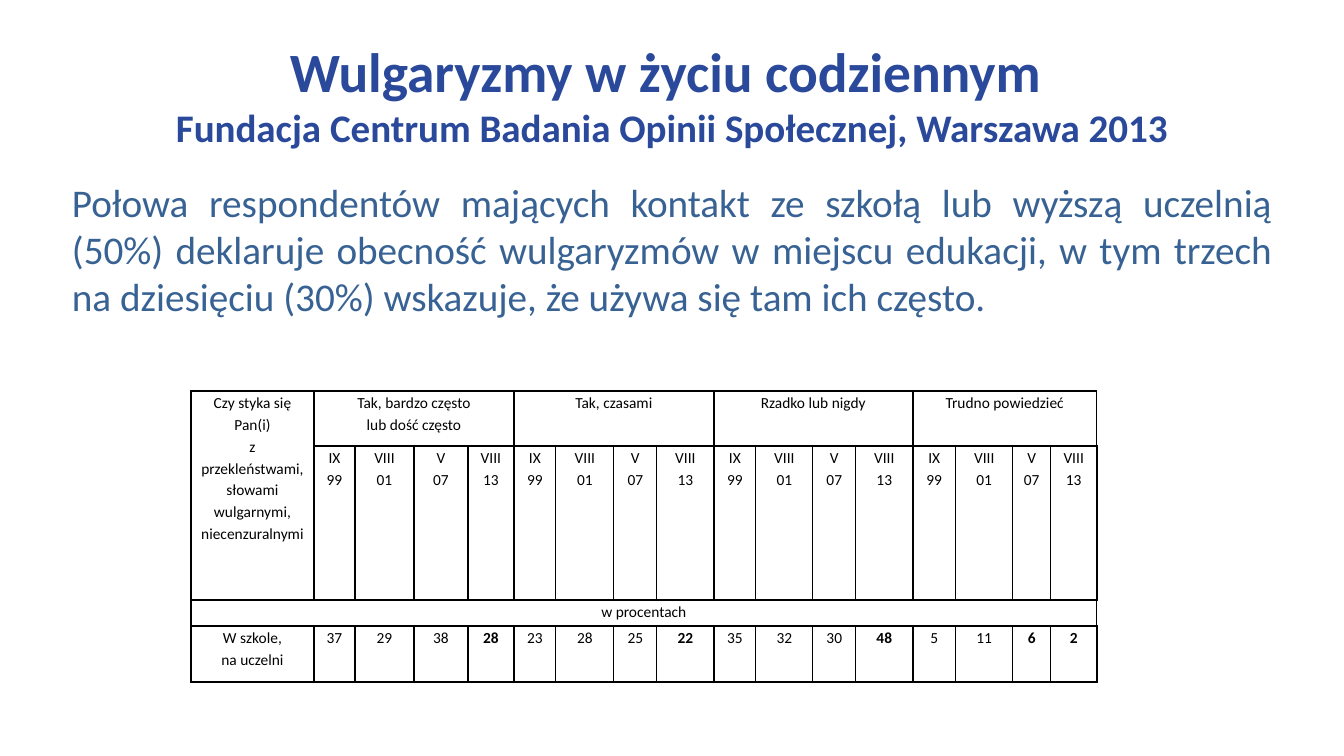
import pptx
import pptx.dml.color
import pptx.enum.text
import pptx.oxml
import pptx.oxml.ns
import pptx.util

ALIGN = pptx.enum.text.PP_ALIGN
ANCHOR = pptx.enum.text.MSO_ANCHOR
EMU_PER_PX = 914400 / 100.8


def px(length):
    """Turn whole pixels into EMU."""
    return pptx.util.Emu(round(length * EMU_PER_PX))


def colour(value):
    """Turn a hex string into a colour."""
    return pptx.dml.color.RGBColor.from_string(value)


def apply(target, values):
    """Set attributes from a dict of format values."""
    for name, value in values.items():
        setattr(target, name, value)


class SlideWriter:
    """Holds the style and the current slide."""

    font = "Calibri"
    black = "000000"
    title_blue = "2A499B"
    body_blue = "376293"

    def __init__(self, deck):
        """Add a blank slide to the deck."""
        self.page = deck.slides.add_slide(deck.slide_layouts[6])

    def span(self, para, text, size, hue, bold=False):
        """Add one formatted run to a paragraph."""
        span = para.add_run()
        span.text = text
        apply(span.font, {"name": self.font, "size": pptx.util.Pt(size), "bold": bold})
        span.font.color.rgb = colour(hue)

    def text(self, left, top, width, height, lines, hue, align, anchor, bold=False):
        """Add a text box with one paragraph of (text, size) lines."""
        box = self.page.shapes.add_textbox(px(left), px(top), px(width), px(height))
        frame = box.text_frame
        margins = {f"margin_{side}": px(5) for side in ("left", "right", "top", "bottom")}
        apply(frame, {"word_wrap": True, "vertical_anchor": anchor, **margins})
        para = frame.paragraphs[0]
        para.alignment = align
        for index, (text, size) in enumerate(lines):
            if index:
                para.add_line_break()
            self.span(para, text, size, hue, bold)

    def borders(self, cell, widths):
        """Draw the four borders of a cell, widths in points by side."""
        properties = cell._tc.get_or_add_tcPr()
        for side in "LRTB":
            properties.append(pptx.oxml.parse_xml(
                f'<a:ln{side} {pptx.oxml.ns.nsdecls("a")} w="{pptx.util.Pt(widths.get(side, 1))}">'
                f'<a:solidFill><a:srgbClr val="{self.black}"/></a:solidFill></a:ln{side}>'))

    def cell(self, cell, text, bold=False):
        """Fill a table cell with centred lines."""
        apply(cell, {"margin_left": px(7), "margin_right": px(7),
                     "margin_top": 0, "margin_bottom": 0,
                     "vertical_anchor": ANCHOR.TOP})
        for index, line in enumerate(text.split("\n")):
            frame = cell.text_frame
            para = frame.add_paragraph() if index else frame.paragraphs[0]
            apply(para, {"alignment": ALIGN.CENTER, "line_spacing": 1.15})
            self.span(para, line, 11, self.black, bold)

    def table(self, left, top, columns, rows, texts, merges, bold_cells, group):
        """Add a bordered table; texts maps (row, column) to wording."""
        frame = self.page.shapes.add_table(
            len(rows), len(columns), px(left), px(top), px(sum(columns)), px(sum(rows)))
        table = frame.table
        apply(table, {"first_row": False, "horz_banding": False})
        for column, width in zip(table.columns, columns):
            column.width = px(width)
        for row, height in zip(table.rows, rows):
            row.height = px(height)
        for row in range(len(rows)):
            for column in range(len(columns)):
                cell = table.cell(row, column)
                widths = {}
                if column and column % group == 0:
                    widths["R"] = 1.5
                if column > group and column % group == 1:
                    widths["L"] = 1.5
                self.borders(cell, widths)
                cell.fill.background()
                if (row, column) in texts:
                    self.cell(cell, texts[row, column], (row, column) in bold_cells)
        for first, last in merges:
            table.cell(*first).merge(table.cell(*last))


def main():
    """Build the slide and save it."""
    deck = pptx.Presentation()
    apply(deck, {"slide_width": px(1344), "slide_height": px(756)})
    writer = SlideWriter(deck)
    writer.text(67, 30, 1210, 127, [
        ("Wulgaryzmy w życiu codziennym ", 39.6),
        ("Fundacja Centrum Badania Opinii Społecznej, Warszawa 2013", 27.9),
    ], writer.title_blue, ALIGN.CENTER, ANCHOR.MIDDLE, bold=True)
    writer.text(67, 173, 1210, 502, [
        ("Połowa respondentów mających kontakt ze szkołą lub wyższą uczelnią (50%) "
         "deklaruje obecność wulgaryzmów w miejscu edukacji, w tym trzech na dziesięciu "
         "(30%) wskazuje, że używa się tam ich często.", 28),
    ], writer.body_blue, ALIGN.JUSTIFY, ANCHOR.TOP)

    answers = {
        "Tak, bardzo często\nlub dość często": (37, 29, 38, 28),
        "Tak, czasami": (23, 28, 25, 22),
        "Rzadko lub nigdy": (35, 32, 30, 48),
        "Trudno powiedzieć": (5, 11, 6, 2),
    }
    surveys = ("IX 99", "VIII\n01", "V\n07", "VIII\n13")
    group = len(surveys)
    last_column = group * len(answers)
    texts = {
        (0, 0): "Czy styka się Pan(i)\nz przekleństwami,\nsłowami\nwulgarnymi,\nniecenzuralnymi",
        (2, 0): "w procentach",
        (3, 0): "W szkole,\nna uczelni",
    }
    merges = [((0, 0), (1, 0)), ((2, 0), (2, last_column))]
    for number, (answer, shares) in enumerate(answers.items()):
        start = 1 + number * group
        texts[0, start] = answer
        merges.append(((0, start), (0, start + group - 1)))
        for column, (survey, share) in enumerate(zip(surveys, shares), start):
            texts[1, column] = survey
            texts[3, column] = str(share)
    bold_cells = {(3, column) for column in (4, 8, 12, 15, 16)}
    columns = [123, 41, 59, 54, 46, 42, 58, 43, 57, 42, 57, 43, 57, 43, 57, 38, 46]
    writer.table(191, 391, columns, [55, 154, 26, 56], texts, merges, bold_cells, group)
    deck.save("out.pptx")


if __name__ == "__main__":
    main()
